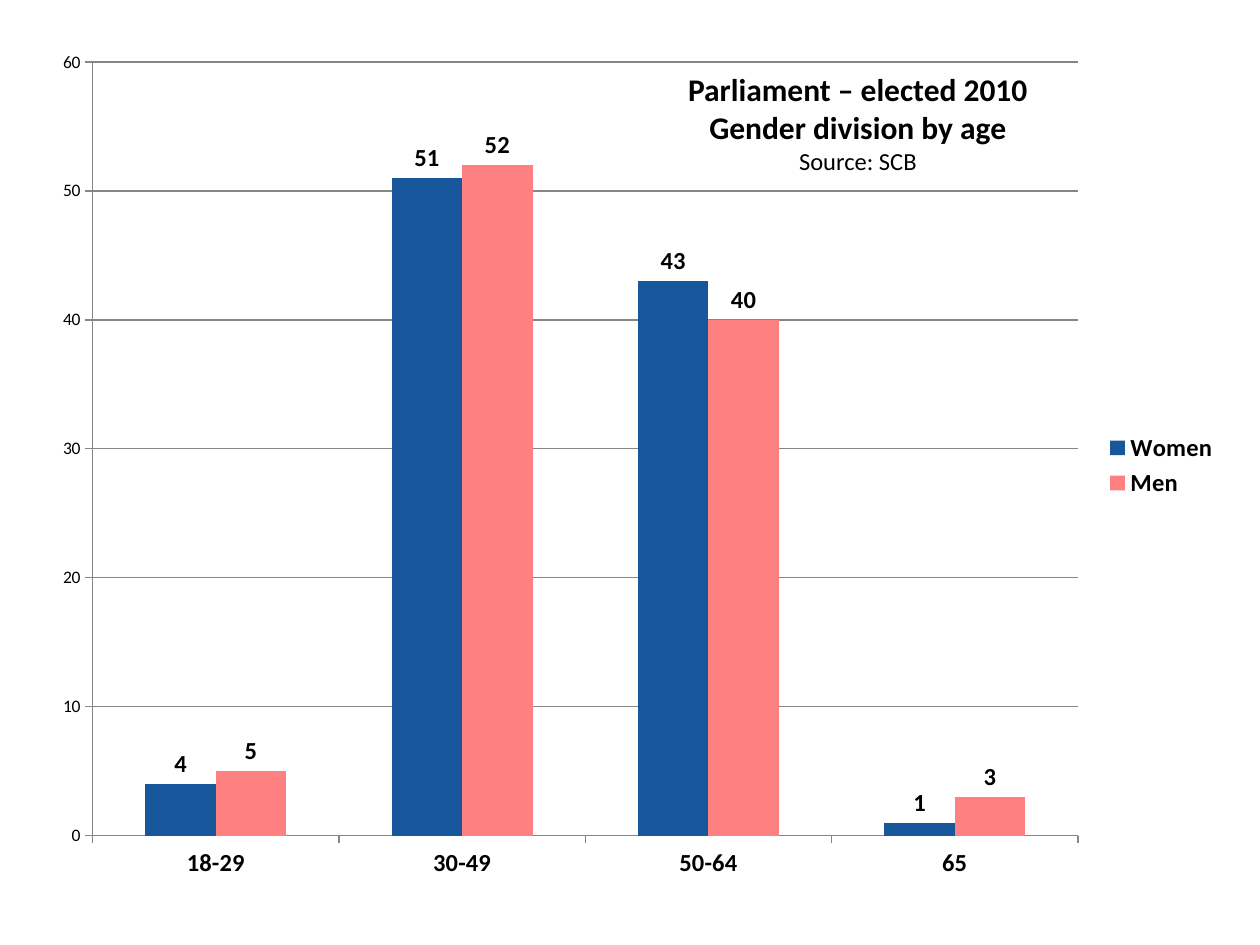
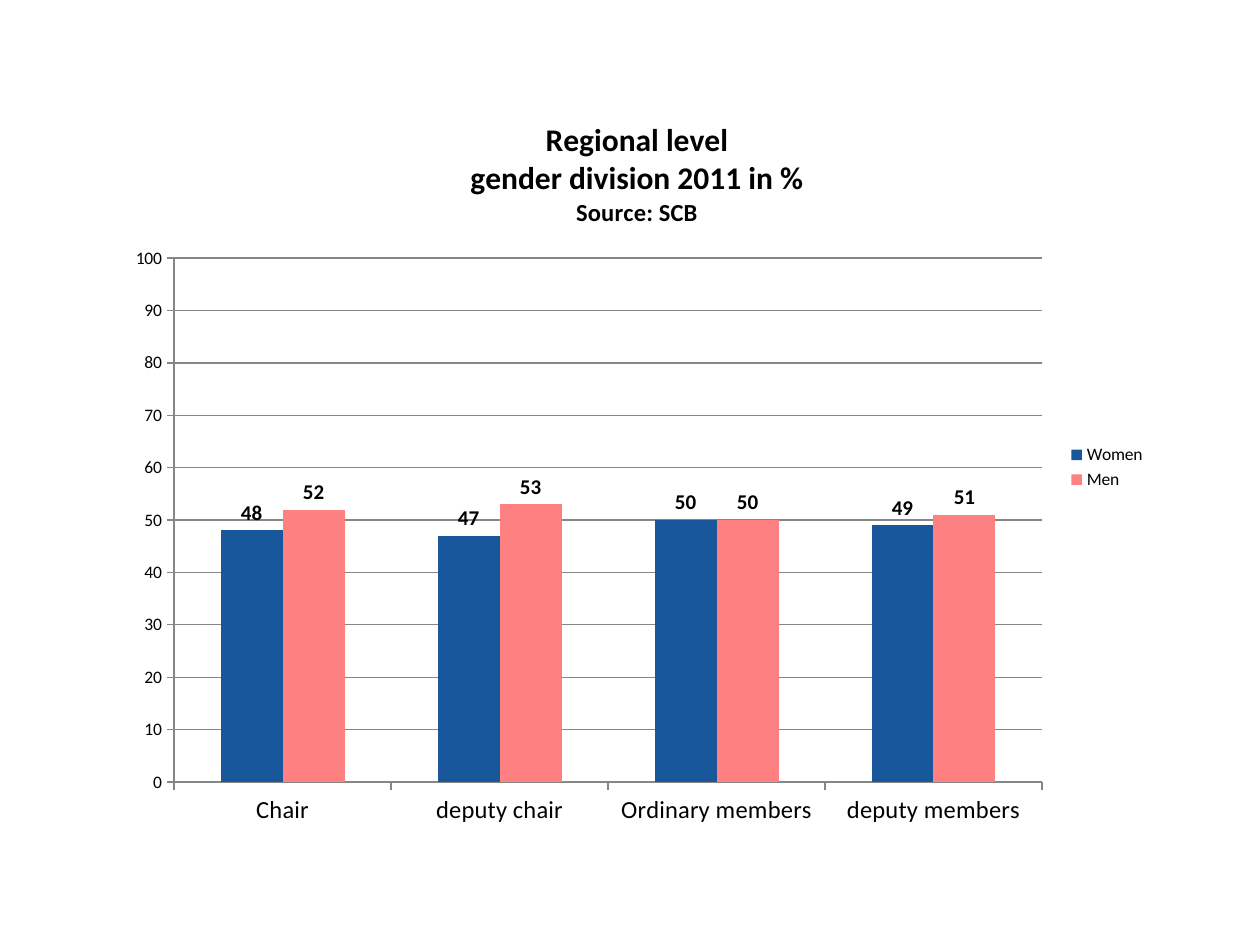
from dataclasses import dataclass
from typing import NamedTuple

from lxml.etree import SubElement
from pptx import Presentation
from pptx.chart.chart import Chart
from pptx.chart.data import CategoryChartData
from pptx.dml.color import RGBColor
from pptx.enum.chart import (XL_CHART_TYPE, XL_LABEL_POSITION,
                             XL_LEGEND_POSITION, XL_TICK_MARK)
from pptx.enum.text import MSO_AUTO_SIZE, PP_ALIGN
from pptx.oxml.ns import qn
from pptx.slide import Slide
from pptx.text.text import Font, TextFrame
from pptx.util import Pt

FACE = "Calibri"
BLACK = RGBColor(0, 0, 0)
GRAY = RGBColor(0x86, 0x86, 0x86)
BLUE = RGBColor(0x18, 0x57, 0x9B)
PINK = RGBColor(0xFF, 0x80, 0x80)


class Box(NamedTuple):
    left: float
    top: float
    width: float
    height: float


class Style(NamedTuple):
    size: float
    bold: bool = False


class Line(NamedTuple):
    text: str
    style: Style


class Group(NamedTuple):
    name: str
    color: RGBColor
    values: tuple[int, ...]


HEAD = Style(18, True)
BODY = Style(10)


@dataclass
class Graph:
    frame: Box
    plot: Box
    top: int
    names: tuple[str, ...]
    groups: tuple[Group, ...]
    axis: Style
    key: Style
    label: Style
    title: tuple[Line, ...] = ()


AGES = Graph(
    Box(22.5, 20, 681, 492), Box(53, 35.5, 563, 442), 60,
    ("18-29", "30-49", "50-64", "65"),
    (Group("Women", BLUE, (4, 51, 43, 1)), Group("Men", PINK, (5, 52, 40, 3))),
    axis=Style(14, True), key=Style(14, True), label=Style(14, True))

AGES_HEAD = (Line("Parliament – elected 2010", HEAD),
             Line("Gender division by age", HEAD),
             Line("Source: SCB", Style(14)))

REGION = Graph(
    Box(66, 53.5, 596, 427), Box(99.5, 147.5, 496, 299.5), 100,
    ("Chair", "deputy chair", "Ordinary members", "deputy members"),
    (Group("Women", BLUE, (48, 47, 50, 49)),
     Group("Men", PINK, (52, 53, 50, 51))),
    axis=Style(14), key=BODY, label=Style(12, True),
    title=(Line("Regional level", HEAD),
           Line("gender division 2011 in %", HEAD),
           Line("Source: SCB", Style(14, True))))


def set_font(font: Font, style: Style) -> None:
    font.name = FACE
    font.size = Pt(style.size)
    font.bold = style.bold
    font.color.rgb = BLACK


def write(frame: TextFrame, lines: tuple[Line, ...]) -> None:
    frame.text = "\n".join(line.text for line in lines)
    for para, line in zip(frame.paragraphs, lines):
        para.alignment = PP_ALIGN.CENTER
        for run in para.runs:
            set_font(run.font, line.style)


def place_plot(chart: Chart, frame: Box, plot: Box) -> None:
    """Fix the inner plot area, given in slide points."""
    area = chart.element.find(".//" + qn("c:plotArea"))
    for old in area.findall(qn("c:layout")):
        area.remove(old)
    layout = SubElement(area, qn("c:layout"))
    area.insert(0, layout)
    manual = SubElement(layout, qn("c:manualLayout"))
    parts = {
        "layoutTarget": "inner", "xMode": "edge", "yMode": "edge",
        "x": (plot.left - frame.left) / frame.width,
        "y": (plot.top - frame.top) / frame.height,
        "w": plot.width / frame.width,
        "h": plot.height / frame.height,
    }
    for tag, value in parts.items():
        SubElement(manual, qn("c:" + tag)).set("val", str(value))


def style_axes(chart: Chart, graph: Graph) -> None:
    cats, vals = chart.category_axis, chart.value_axis
    for axis, style in ((cats, graph.axis), (vals, BODY)):
        axis.major_tick_mark = XL_TICK_MARK.OUTSIDE
        axis.minor_tick_mark = XL_TICK_MARK.NONE
        axis.format.line.color.rgb = GRAY
        axis.format.line.width = Pt(0.75)
        set_font(axis.tick_labels.font, style)
    vals.minimum_scale, vals.maximum_scale = 0, graph.top
    vals.major_unit = 10
    vals.has_major_gridlines = True
    grid = vals.major_gridlines.format.line
    grid.color.rgb = GRAY
    grid.width = Pt(0.75)


def style_bars(chart: Chart, graph: Graph) -> None:
    bars = chart.plots[0]
    bars.gap_width, bars.overlap = 150, 0
    bars.vary_by_categories = False
    for series, group in zip(bars.series, graph.groups):
        series.format.fill.solid()
        series.format.fill.fore_color.rgb = group.color
        series.invert_if_negative = False
        labels = series.data_labels
        labels.show_value = True
        labels.position = XL_LABEL_POSITION.OUTSIDE_END
        set_font(labels.font, graph.label)


def add_graph(slide: Slide, graph: Graph) -> None:
    data = CategoryChartData()
    data.categories = graph.names
    for group in graph.groups:
        data.add_series(group.name, group.values)
    chart = slide.shapes.add_chart(
        XL_CHART_TYPE.COLUMN_CLUSTERED, *map(Pt, graph.frame), data).chart
    set_font(chart.font, BODY)
    chart.has_title = bool(graph.title)
    if graph.title:
        write(chart.chart_title.text_frame, graph.title)
        chart.chart_title.include_in_layout = False
    chart.has_legend = True
    chart.legend.position = XL_LEGEND_POSITION.RIGHT
    chart.legend.include_in_layout = False
    set_font(chart.legend.font, graph.key)
    style_axes(chart, graph)
    style_bars(chart, graph)
    place_plot(chart, graph.frame, graph.plot)


def add_head(slide: Slide, box: Box, lines: tuple[Line, ...]) -> None:
    frame = slide.shapes.add_textbox(*map(Pt, box)).text_frame
    frame.word_wrap = False
    frame.auto_size = MSO_AUTO_SIZE.SHAPE_TO_FIT_TEXT
    write(frame, lines)


def main() -> None:
    deck = Presentation()
    deck.slide_width, deck.slide_height = Pt(720), Pt(540)
    blank = deck.slide_layouts[6]
    ages = deck.slides.add_slide(blank)
    add_graph(ages, AGES)
    add_head(ages, Box(366.5, 36.75, 247.5, 67.5), AGES_HEAD)
    add_graph(deck.slides.add_slide(blank), REGION)
    deck.save("out.pptx")


if __name__ == "__main__":
    main()
